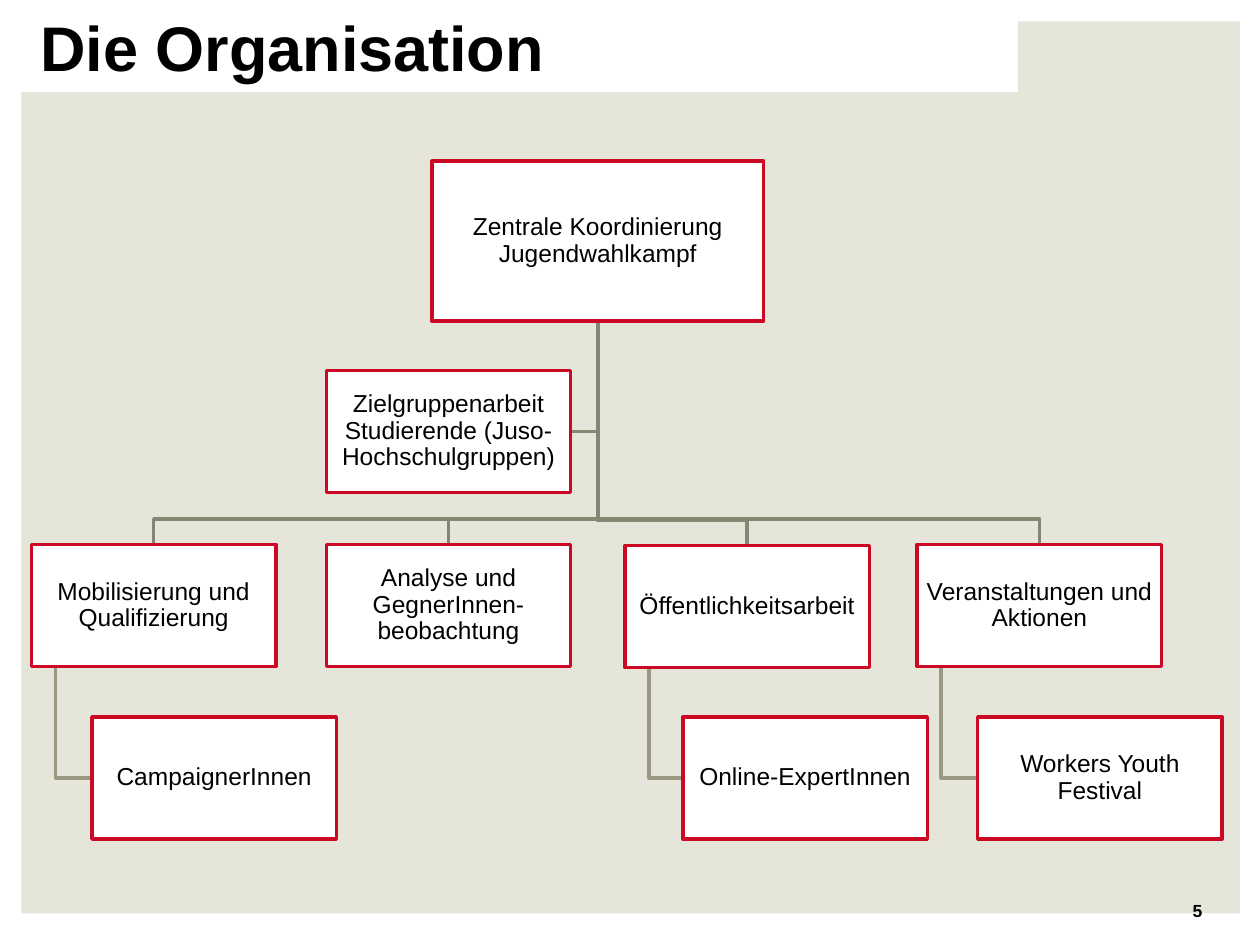
from pptx import Presentation
from pptx.dml.color import RGBColor
from pptx.enum.shapes import MSO_SHAPE
from pptx.enum.text import MSO_ANCHOR, PP_ALIGN
from pptx.util import Inches, Pt

BLACK = RGBColor(0x00, 0x00, 0x00)
WHITE = RGBColor(0xFF, 0xFF, 0xFF)
PANEL = RGBColor(0xE6, 0xE5, 0xD9)
RED = RGBColor(0xCC, 0x09, 0x24)
BRANCH = RGBColor(0x86, 0x87, 0x73)
TWIG = RGBColor(0x98, 0x98, 0x83)

TITLE = "Die Organisation"
PAGE = "5"
HEAD = ("Zentrale Koordinierung Jugendwahlkampf", 3.43, 1.28)
ASSISTANT = ("Zielgruppenarbeit Studierende (Juso-Hochschulgruppen)", 2.59, 2.94)
# (text, left, top), then the same for the unit below it, if any
DEPARTMENTS = [
    (("Mobilisierung und Qualifizierung", 0.25, 4.32), ("CampaignerInnen", 0.73, 5.69)),
    (("Analyse und GegnerInnen-beobachtung", 2.59, 4.32), None),
    (("Öffentlichkeitsarbeit", 4.96, 4.33), ("Online-ExpertInnen", 5.42, 5.69)),
    (("Veranstaltungen und Aktionen", 7.28, 4.32), ("Workers Youth Festival", 7.76, 5.69)),
]
HEAD_W, HEAD_H = 2.63, 1.27
BOX_W, BOX_H = 1.94, 0.97
BUS_GAP = 0.2     # from the horizontal line down to a department
TWIG_INDENT = 0.19  # from a department's left edge to its downward line

prs = Presentation()
prs.slide_width, prs.slide_height = Inches(10), Inches(7.5)
slide = prs.slides.add_slide(prs.slide_layouts[6])


def add_rect(left, top, width, height, fill, line=None):
    s = slide.shapes.add_shape(MSO_SHAPE.RECTANGLE, *map(Inches, (left, top, width, height)))
    s.shadow.inherit = False
    s.fill.solid()
    s.fill.fore_color.rgb = fill
    if line is None:
        s.line.fill.background()
    else:
        s.line.color.rgb = line
        s.line.width = Pt(2)
    return s


def set_text(s, text, size, align, bold=False, spacing=None, **frame):
    tf = s.text_frame
    for name, value in {"word_wrap": True, **frame}.items():
        setattr(tf, name, value)
    p = tf.paragraphs[0]
    p.alignment, p.line_spacing = align, spacing
    r = p.add_run()
    r.text = text
    for name, value in {"name": "Arial", "size": Pt(size), "bold": bold}.items():
        setattr(r.font, name, value)
    r.font.color.rgb = BLACK


def add_unit(unit, width=BOX_W, height=BOX_H):
    text, left, top = unit
    s = add_rect(left, top, width, height, WHITE, RED)
    margins = {f"margin_{side}": Inches(0.01) for side in ("left", "top", "right", "bottom")}
    set_text(s, text, 14, PP_ALIGN.CENTER, spacing=0.9,
             vertical_anchor=MSO_ANCHOR.MIDDLE, **margins)


def add_elbow(points, color):
    """Draw an open line through the points."""
    start, *rest = [(Inches(x), Inches(y)) for x, y in points]
    builder = slide.shapes.build_freeform(*start)
    builder.add_line_segments(rest, close=False)
    s = builder.convert_to_shape()
    s.shadow.inherit = False
    s.fill.background()
    s.line.color.rgb = color
    s.line.width = Pt(2)


add_rect(0.17, 0.17, 9.67, 7.08, PANEL)
set_text(add_rect(0.08, 0.12, 8, 0.61, WHITE), TITLE, 36, PP_ALIGN.LEFT, bold=True,
         spacing=Pt(36), margin_left=Inches(0.24), vertical_anchor=MSO_ANCHOR.TOP)
page_box = slide.shapes.add_textbox(*map(Inches, (7.17, 7.09, 2.47, 0.24)))
set_text(page_box, PAGE, 10, PP_ALIGN.RIGHT, bold=True)

# Lines first, so that the boxes cover their ends
trunk_x, trunk_y = HEAD[1] + HEAD_W / 2, HEAD[2] + HEAD_H
assistant_y = ASSISTANT[2] + BOX_H / 2
add_elbow([(trunk_x, trunk_y), (trunk_x, assistant_y),
           (ASSISTANT[1] + BOX_W, assistant_y)], BRANCH)
for (_, left, top), unit in DEPARTMENTS:
    center, bus_y = left + BOX_W / 2, top - BUS_GAP
    add_elbow([(trunk_x, trunk_y), (trunk_x, bus_y), (center, bus_y), (center, top)], BRANCH)
    if unit:
        twig_x, unit_y = left + TWIG_INDENT, unit[2] + BOX_H / 2
        add_elbow([(twig_x, top + BOX_H), (twig_x, unit_y), (unit[1], unit_y)], TWIG)

add_unit(HEAD, HEAD_W, HEAD_H)
add_unit(ASSISTANT)
for department, unit in DEPARTMENTS:
    add_unit(department)
    if unit:
        add_unit(unit)

prs.save("out.pptx")
